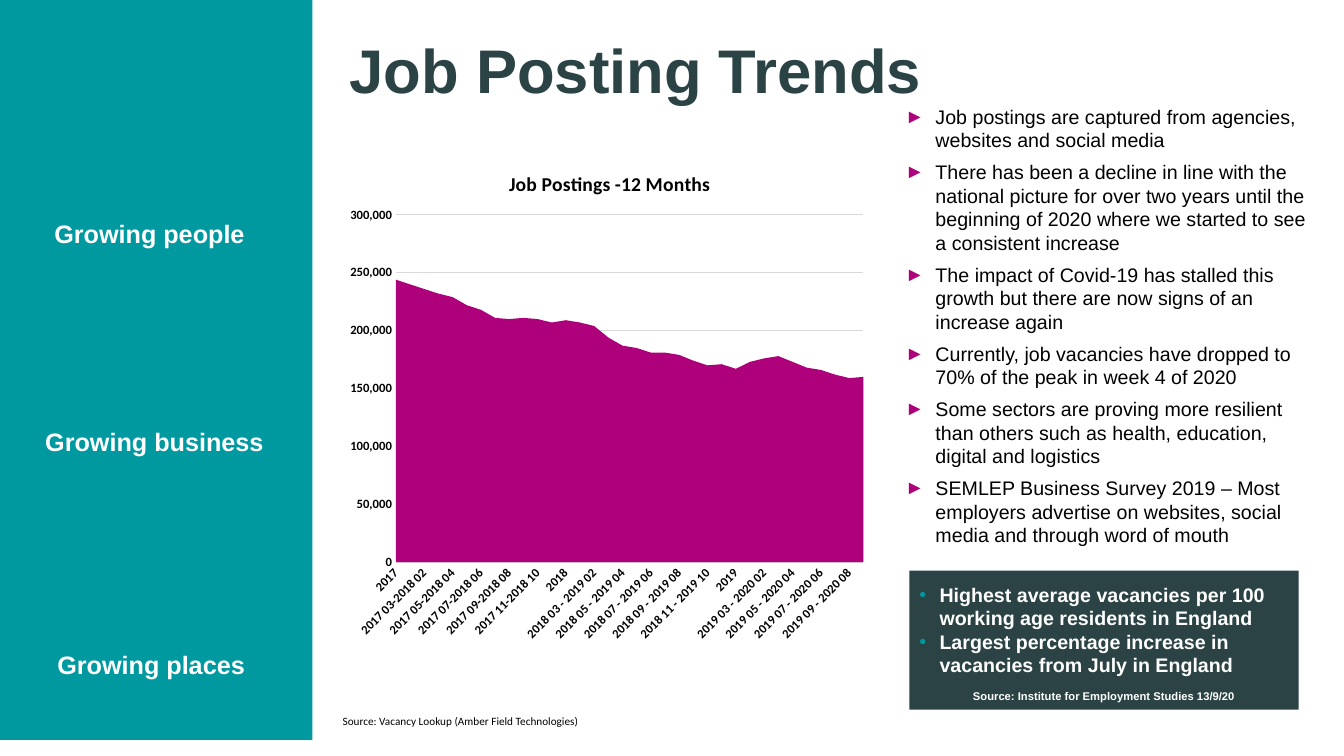
from lxml import etree
from pptx import Presentation
from pptx.chart.data import CategoryChartData
from pptx.dml.color import RGBColor
from pptx.enum.chart import XL_CHART_TYPE as ChartType, XL_TICK_MARK as TickMark
from pptx.enum.shapes import MSO_SHAPE as ShapeKind
from pptx.enum.text import MSO_ANCHOR as Anchor, PP_ALIGN as Align
from pptx.oxml.ns import qn
from pptx.util import Pt

PX = 9144  # 100 px to the inch
COLORS = {"teal": "0099A0", "slate": "2B4345", "magenta": "AD007A",
          "grid": "D9D9D9", "white": "FFFFFF", "black": "000000"}
COLORS = {name: RGBColor.from_string(value) for name, value in COLORS.items()}


def write(paragraph, text, size, color, bold=False, font="Arial", bullet=None, indent=0):
    """Add one run; bullet is a (character, colour name) pair hanging by indent px."""
    if bullet:
        character, bullet_color = bullet
        properties = paragraph._p.get_or_add_pPr()
        properties.set("marL", str(indent * PX))
        properties.set("indent", str(-indent * PX))
        fill = etree.SubElement(properties, qn("a:buClr"))
        etree.SubElement(fill, qn("a:srgbClr"), val=str(COLORS[bullet_color]))
        etree.SubElement(properties, qn("a:buFont"), typeface="Arial")
        etree.SubElement(properties, qn("a:buChar"), char=character)
    run = paragraph.add_run()
    run.text = text
    run.font.name = font
    run.font.size = Pt(size)
    run.font.bold = bold
    run.font.color.rgb = COLORS[color]


def place(parent, index, **fractions):
    """Give a chart part a manual layout in fractions of the chart."""
    for old in parent.findall(qn("c:layout")):
        parent.remove(old)
    layout = etree.Element(qn("c:layout"))
    manual = etree.SubElement(layout, qn("c:manualLayout"))
    if "w" in fractions:
        etree.SubElement(manual, qn("c:layoutTarget"), val="inner")
    for mode in ("xMode", "yMode"):
        etree.SubElement(manual, qn(f"c:{mode}"), val="edge")
    for key, value in fractions.items():
        etree.SubElement(manual, qn(f"c:{key}"), val=str(value))
    parent.insert(index, layout)


presentation = Presentation()
presentation.slide_width = 1333 * PX
presentation.slide_height = 750 * PX
slide = presentation.slides.add_slide(presentation.slide_layouts[6])
shapes = slide.shapes

# Sidebar and highlight panel
panels = []
for left, top, width, height, color in [(0, 0, 310, 734, "teal"),
                                        (902, 566, 386, 138, "slate")]:
    panel = shapes.add_shape(ShapeKind.RECTANGLE, left * PX, top * PX, width * PX, height * PX)
    panel.shadow.inherit = False
    panel.fill.solid()
    panel.fill.fore_color.rgb = COLORS[color]
    panel.line.fill.background()
    panels.append(panel)

# Single-line texts: left, top, width, height, wrap, text, size, colour, bold, font
for left, top, width, height, wrap, *content in [
    (44, 212, 211, 40, False, "Growing people", 18, "white", True),
    (35, 418, 239, 40, False, "Growing business", 18, "white", True),
    (47, 639, 208, 40, False, "Growing places", 18, "white", True),
    (337, 0, 951, 145, True, "Job Posting Trends", 44, "slate", True),
    (330, 704, 411, 37, True, "Source: Vacancy Lookup (Amber Field Technologies)",
     8, "black", False, "Calibri"),
]:
    frame = shapes.add_textbox(left * PX, top * PX, width * PX, height * PX).text_frame
    frame.word_wrap = wrap
    if content[0] == "Job Posting Trends":
        frame.vertical_anchor = Anchor.MIDDLE
        frame.paragraphs[0].line_spacing = 0.9
    write(frame.paragraphs[0], *content)

# Highlights
frame = panels[1].text_frame
frame.word_wrap = True
frame.vertical_anchor = Anchor.TOP
frame.margin_top = 12 * PX
for number, text in enumerate([
    "Highest average vacancies per 100 working age residents in England",
    "Largest percentage increase in vacancies from July in England",
]):
    paragraph = frame.add_paragraph() if number else frame.paragraphs[0]
    paragraph.alignment = Align.LEFT
    write(paragraph, text, 14, "white", True, bullet=("•", "teal"), indent=20)
paragraph = frame.add_paragraph()
paragraph.alignment = Align.CENTER
paragraph.space_before = Pt(9)
write(paragraph, "Source: Institute for Employment Studies 13/9/20", 8, "white", True)

# Commentary
frame = shapes.add_textbox(888 * PX, 99 * PX, 429 * PX, 453 * PX).text_frame
frame.word_wrap = True
for number, text in enumerate([
    "Job postings are captured from agencies, websites and social media",
    "There has been a decline in line with the national picture for over two years until "
    "the beginning of 2020 where we started to see a consistent increase",
    "The impact of Covid-19 has stalled this growth but there are now signs of an increase again",
    "Currently, job vacancies have dropped to 70% of the peak in week 4 of 2020",
    "Some sectors are proving more resilient than others such as health, education, "
    "digital and logistics",
    "SEMLEP Business Survey 2019 – Most employers advertise on websites, social media "
    "and through word of mouth",
]):
    paragraph = frame.add_paragraph() if number else frame.paragraphs[0]
    if number:
        paragraph.space_before = Pt(6)
    write(paragraph, text, 14, "black", bullet=("►", "magenta"), indent=30)

# Rolling 12-month periods: a whole year, then month ranges that end a year later
periods = []
for year, last_month, dash in [(2017, 12, "-"), (2018, 12, " - "), (2019, 10, " - ")]:
    periods.append(str(year))
    periods += [f"{year} {month:02}{dash}{year + 1} {month - 1:02}"
                for month in range(2, last_month + 1)]
thousands = [244, 240, 236, 232, 229, 222, 218, 211, 210, 211, 210, 207,
             209, 207, 204, 194, 187, 185, 181, 181, 179, 174, 170, 171,
             167, 173, 176, 178, 173, 168, 166, 162, 159, 160]
data = CategoryChartData(number_format="#,##0")
data.categories = periods
data.add_series("Series 1", [value * 1000 for value in thousands])
chart = shapes.add_chart(ChartType.AREA, 337 * PX, 145 * PX, 530 * PX, 502 * PX, data).chart
chart.has_legend = False
chart.font.name = "Calibri"
chart.font.size = Pt(10)
chart.font.bold = True
chart.font.color.rgb = COLORS["black"]
chart.has_title = True
write(chart.chart_title.text_frame.paragraphs[0], "Job Postings -12 Months",
      14, "black", True, "Calibri")
place(chart.chart_title.element, 1, x=0.31, y=0.04)
place(chart.element.find(".//" + qn("c:plotArea")), 0, x=0.105, y=0.136, w=0.875, h=0.686)
series = chart.plots[0].series[0]
series.format.fill.solid()
series.format.fill.fore_color.rgb = COLORS["magenta"]

period_axis, count_axis = chart.category_axis, chart.value_axis
for axis in (period_axis, count_axis):
    axis.major_tick_mark = axis.minor_tick_mark = TickMark.NONE
    axis.tick_labels.font.size = Pt(9)
    axis.tick_labels.font.bold = True
    axis.tick_labels.font.name = "Calibri"
    axis.tick_labels.font.color.rgb = COLORS["black"]
period_axis.has_major_gridlines = False
count_axis.has_major_gridlines = True
for line in (period_axis.format.line, count_axis.major_gridlines.format.line):
    line.color.rgb = COLORS["grid"]
    line.width = Pt(0.75)
count_axis.format.line.fill.background()
count_axis.minimum_scale, count_axis.maximum_scale = 0, 300000
count_axis.major_unit = 50000
count_axis.tick_labels.number_format = "#,##0"
count_axis.tick_labels.number_format_is_linked = False
count_axis._element.find(qn("c:crossBetween")).set("val", "midCat")
period_axis._element.find(qn("c:txPr")).find(qn("a:bodyPr")).set("rot", "-2700000")
label_step = etree.Element(qn("c:tickLblSkip"), val="2")
period_axis._element.find(qn("c:noMultiLvlLbl")).addprevious(label_step)

presentation.save("out.pptx")
